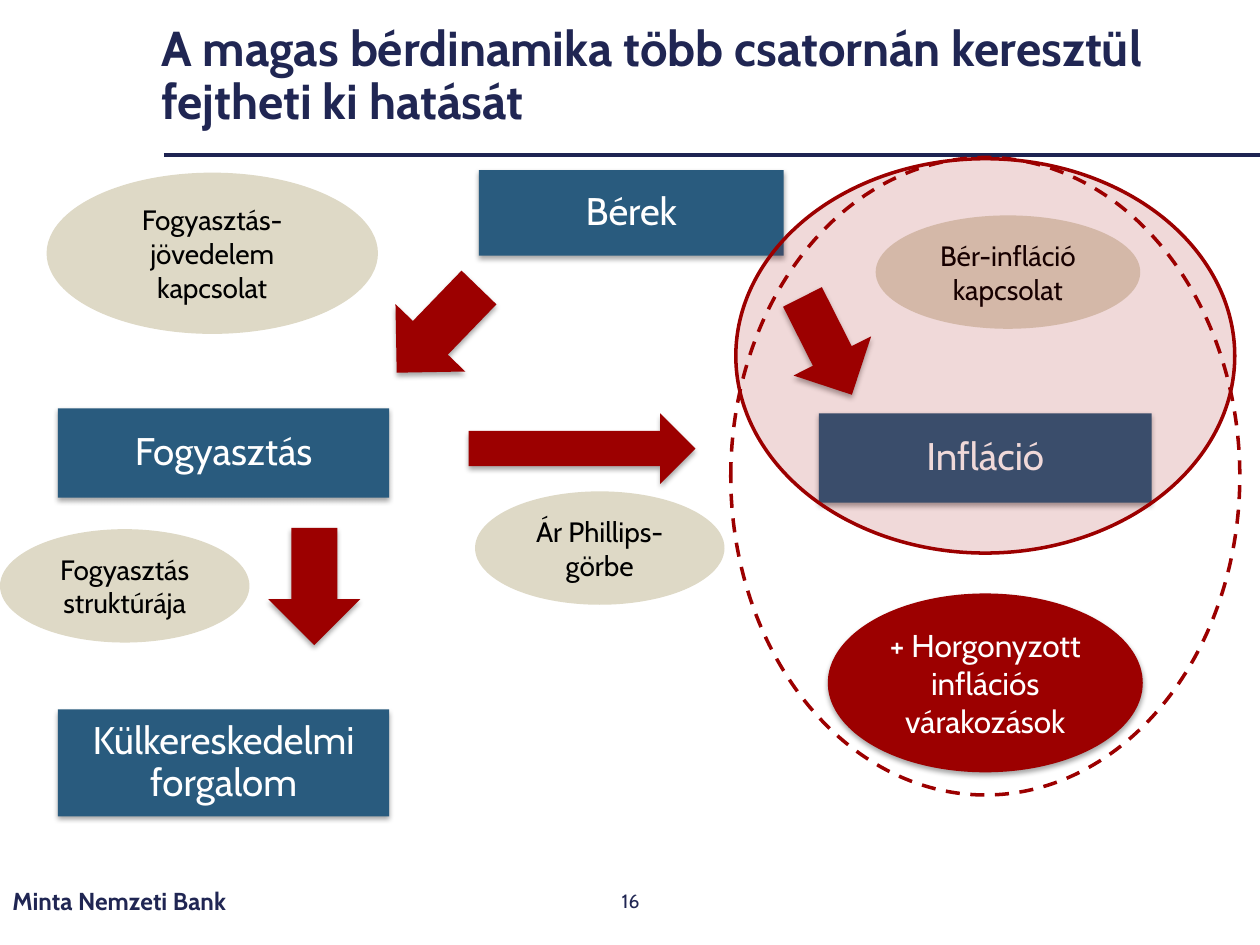
"""Builds a slide on the channels through which wages affect the economy."""
from lxml import etree
from pptx import Presentation
from pptx import util as u
from pptx.dml.color import RGBColor
from pptx.enum import dml, shapes, text
from pptx.oxml import ns

NAVY = RGBColor(0x20, 0x26, 0x53)
RULE = RGBColor(0x1E, 0x24, 0x52)
BLUE = RGBColor(0x29, 0x5B, 0x7E)
RED = RGBColor(0x9C, 0x00, 0x00)
SAND = RGBColor(0xDE, 0xD9, 0xC6)
WHITE = RGBColor(0xFF, 0xFF, 0xFF)
BLACK = RGBColor(0x00, 0x00, 0x00)
KIND = shapes.MSO_SHAPE
CENTER = text.PP_ALIGN.CENTER


def add_xml(parent, tag, **attributes):
    element = etree.SubElement(parent, ns.qn(tag))
    for name, value in attributes.items():
        element.set(name, str(value))
    return element


def apply(target, formats):
    for name, value in formats.items():
        setattr(target, name, value)


class Board:
    """Holds the style and the current slide."""

    font = "Cabin"
    frame = {"word_wrap": True, "vertical_anchor": text.MSO_ANCHOR.MIDDLE}

    def __init__(self, slide):
        self.slide = slide

    def letter(self, holder, words, size, color, bold=False, **paragraph_format):
        apply(holder.text_frame, self.frame)
        paragraph = holder.text_frame.paragraphs[0]
        apply(paragraph, paragraph_format)
        run = paragraph.add_run()
        run.text = words
        apply(run.font, {"name": self.font, "size": u.Pt(size), "bold": bold})
        run.font.color.rgb = color

    def label(self, place, words, size, **formats):
        holder = self.slide.shapes.add_textbox(*map(u.Inches, place))
        self.letter(holder, words, size, NAVY, **formats)

    def rule(self, start, end):
        line = self.slide.shapes.add_connector(
            shapes.MSO_CONNECTOR.STRAIGHT, *map(u.Inches, start + end))
        line.line.color.rgb = RULE
        line.line.width = u.Pt(2.25)
        add_xml(line._element.spPr, "a:effectLst")

    def solid(self, kind, place, color, raised=True, rotation=0):
        body = self.slide.shapes.add_shape(kind, *map(u.Inches, place))
        body.shadow.inherit = False
        body.rotation = rotation
        body.fill.solid()
        body.fill.fore_color.rgb = color
        body.line.fill.background()
        if raised:
            effects = body._element.spPr.find(ns.qn("a:effectLst"))
            shadow = add_xml(effects, "a:outerShdw", blurRad=u.Pt(3.1),
                             dist=u.Pt(1.8), dir=90 * 60000, rotWithShape=0)
            shade = add_xml(shadow, "a:srgbClr", val=BLACK)
            add_xml(shade, "a:alpha", val=35000)
        return body

    def variable(self, place, words):
        box = self.solid(KIND.RECTANGLE, place, BLUE)
        sides = ("left", "right", "top", "bottom")
        apply(box.text_frame, {f"margin_{side}": u.Inches(0.09) for side in sides})
        self.letter(box, words, 22, WHITE, alignment=CENTER, line_spacing=0.9)

    def arrow(self, place, rotation=0):
        self.solid(KIND.DOWN_ARROW, place, RED, rotation=rotation)

    def channel(self, place, words):
        bubble = self.solid(KIND.OVAL, place, SAND, raised=False)
        self.letter(bubble, words, 16, BLACK, alignment=CENTER)

    def expectations(self, place, words):
        bubble = self.solid(KIND.OVAL, place, RED)
        self.letter(bubble, words, 18, WHITE, alignment=CENTER)

    def ring(self, place, opacity=0, dash=None):
        outline = self.solid(KIND.OVAL, place, RED, raised=False)
        if opacity:
            tint = outline._element.spPr.find(ns.qn("a:solidFill"))[0]
            add_xml(tint, "a:alpha", val=opacity * 1000)
        else:
            outline.fill.background()
        outline.line.color.rgb = RED
        apply(outline.line, {"width": u.Pt(2), "dash_style": dash})


def main():
    deck = Presentation()
    apply(deck, {"slide_width": u.Inches(10), "slide_height": u.Inches(7.5)})
    board = Board(deck.slides.add_slide(deck.slide_layouts[6]))

    board.rule((1.3, 1.23), (10, 1.23))
    board.label((1.18, 0.2, 8.15, 0.83),
                "A magas bérdinamika több csatornán keresztül fejtheti ki hatását",
                28, bold=True, line_spacing=0.9)
    board.label((0, 6.95, 3.38, 0.4), "Minta Nemzeti Bank", 14, bold=True)
    board.label((3.88, 6.95, 2.25, 0.4), "16", 11, alignment=CENTER)

    for place, words in (
        ((3.8, 1.35, 2.42, 0.68), "Bérek"),
        ((0.46, 3.24, 2.63, 0.71), "Fogyasztás"),
        ((6.5, 3.28, 2.64, 0.71), "Infláció"),
        ((0.46, 5.63, 2.63, 0.85), "Külkereskedelmi forgalom"),
    ):
        board.variable(place, words)

    for place, rotation in (
        ((4.34, 2.66, 0.56, 1.8), 270),
        ((3.09, 2.15, 0.77, 0.94), 44),
        ((6.22, 2.31, 0.69, 0.87), 333.2),
        ((2.13, 4.19, 0.73, 0.93), 0),
    ):
        board.arrow(place, rotation)

    board.expectations((6.57, 4.71, 2.5, 1.42), "+ Horgonyzott inflációs várakozások")
    board.ring((5.8, 1.25, 4.04, 5.06), dash=dml.MSO_LINE.DASH)

    for place, words in (
        ((3.77, 3.9, 1.98, 0.9), "Ár Phillips-görbe"),
        ((6.95, 1.71, 2.1, 0.9), "Bér-infláció kapcsolat"),
        ((0.37, 1.37, 2.63, 1.28), "Fogyasztás-jövedelem kapcsolat"),
        ((0, 4.2, 1.98, 0.9), "Fogyasztás struktúrája"),
    ):
        board.channel(place, words)

    board.ring((5.84, 1.26, 3.96, 3.13), opacity=15)
    deck.save("out.pptx")


if __name__ == "__main__":
    main()
